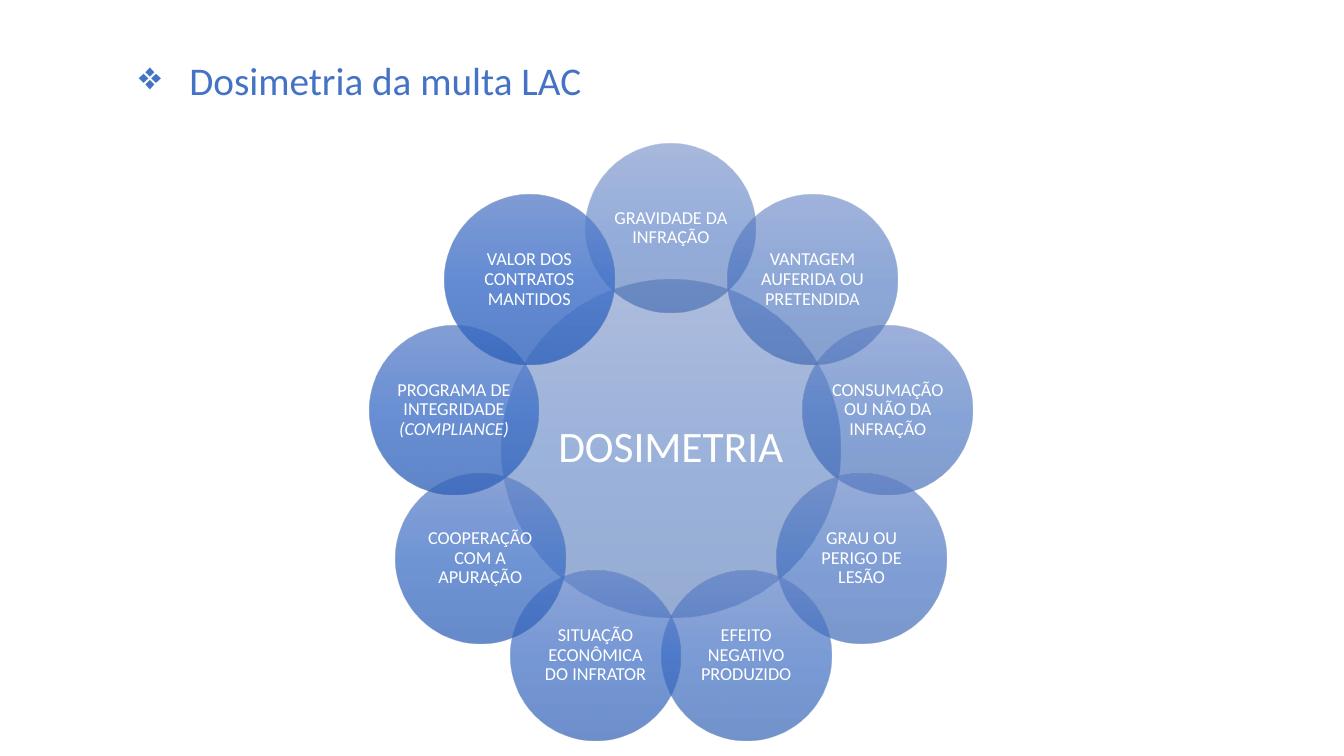
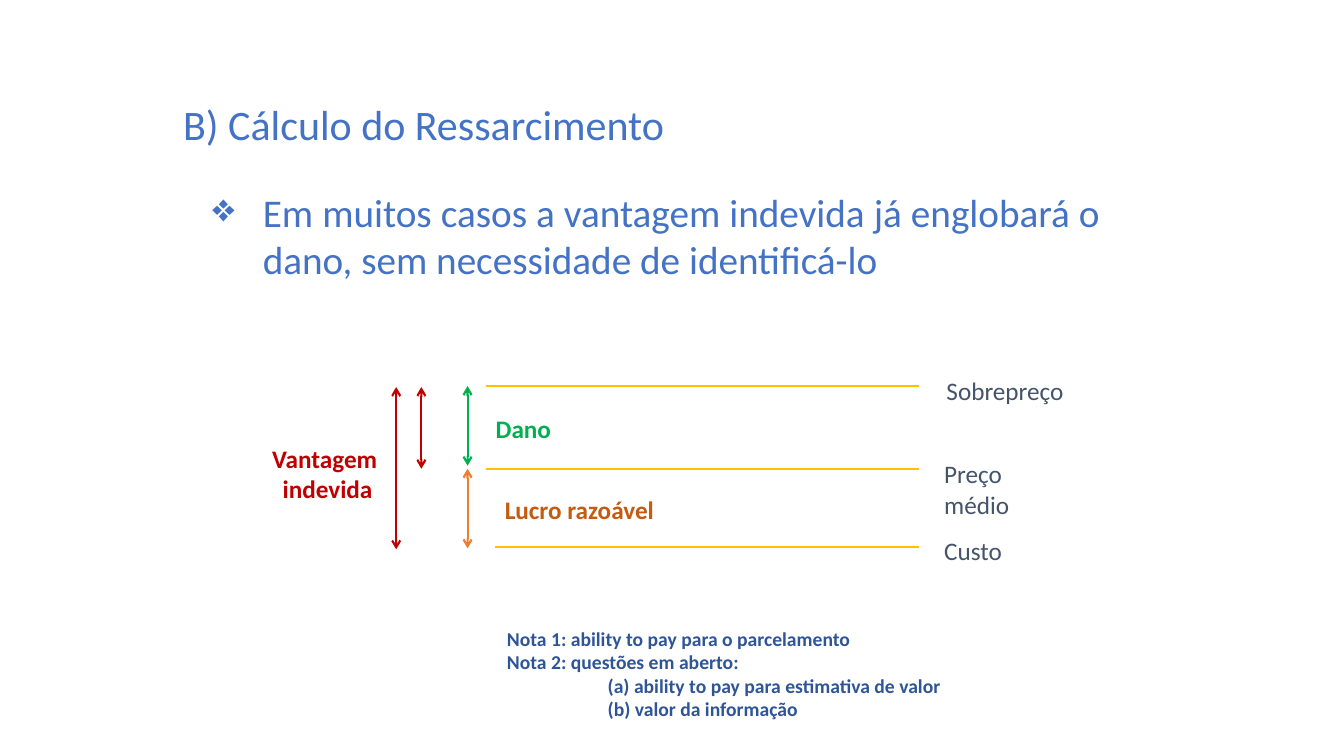
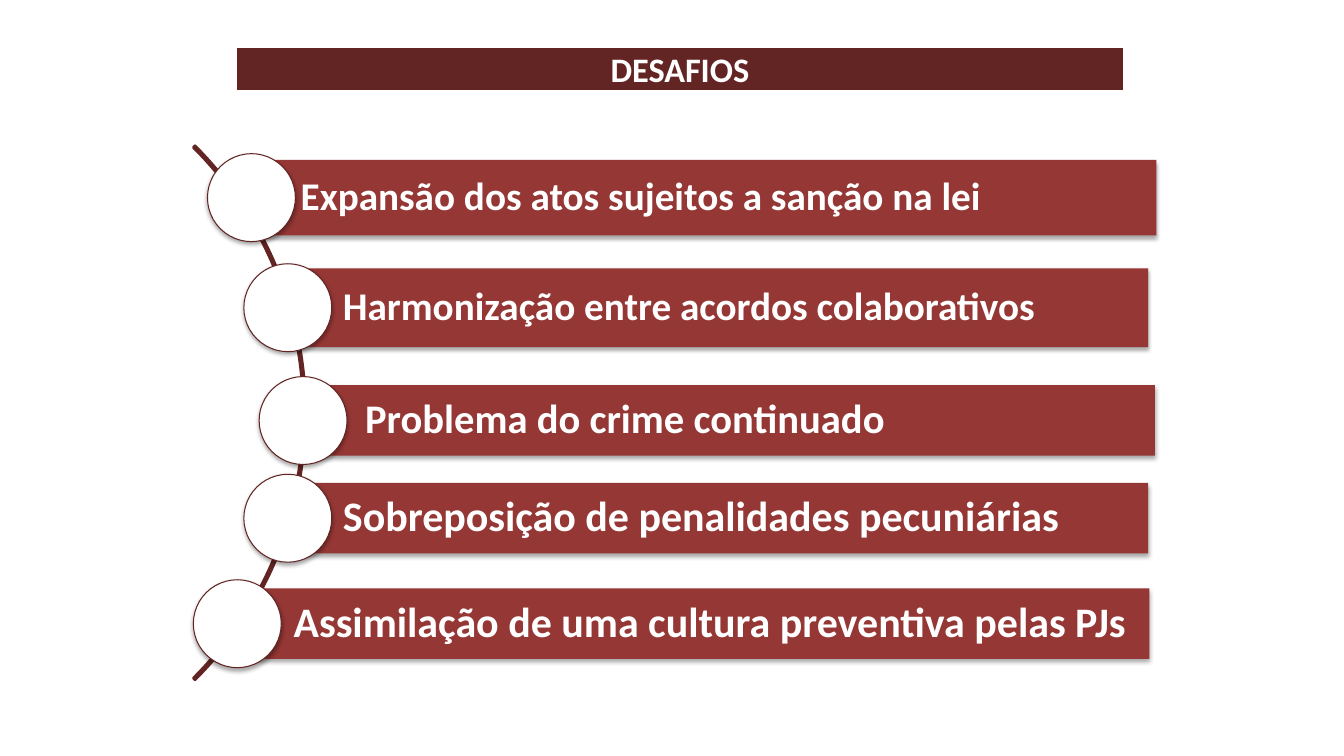
from math import cos, radians, sin

from lxml.etree import SubElement as Sub
from pptx import Presentation
from pptx.dml.color import RGBColor
from pptx.enum.shapes import MSO_CONNECTOR as Link, MSO_SHAPE as Form
from pptx.enum.text import MSO_ANCHOR as Anchor, PP_ALIGN as Align
from pptx.oxml.ns import qn
from pptx.util import Pt

FONT = "Calibri"
BLUE, NAVY, SLATE = "4472C4", "2F5597", "44546A"
RED, GREEN, GOLD = "C00000", "00B050", "FFC000"
ORANGE, RUST = "ED7D31", "C55A11"
WINE, BRICK, WHITE = "632523", "953735", "FFFFFF"


def tint(code):
    return RGBColor.from_string(code)


def blend(start, end, part):
    pairs = [(int(start[k:k + 2], 16), int(end[k:k + 2], 16)) for k in (0, 2, 4)]
    return "".join(f"{round(a + (b - a) * part):02X}" for a, b in pairs)


def write(frame, text, size=18, color=WHITE, bold=False, align=Align.LEFT,
          pad=(7.2, 3.6, 7.2, 3.6), mid=False, space=1, bullet=None, slant="",
          steps=()):
    frame.word_wrap = True
    frame.vertical_anchor = Anchor.MIDDLE if mid else Anchor.TOP
    (frame.margin_left, frame.margin_top,
     frame.margin_right, frame.margin_bottom) = map(Pt, pad)
    for row, line in enumerate(text.split("\n")):
        para = frame.add_paragraph() if row else frame.paragraphs[0]
        para.alignment, para.line_spacing = align, space
        props = para._p.get_or_add_pPr()
        if row in steps:
            props.set("marL", str(Pt(72)))
        if bullet:
            props.set("marL", str(Pt(36)))
            props.set("indent", str(-Pt(36)))
            Sub(props, qn("a:buChar"), char=bullet)
        for part, lean in ((line, False), (slant, True)):
            if part:
                run = para.add_run()
                run.text = part
                font = run.font
                font.name, font.size = FONT, Pt(size)
                font.bold, font.italic = bold, lean
                font.color.rgb = tint(color)


class Deck:
    """Holds the style and the current slide, and draws each kind of element."""

    def __init__(self):
        self.show = Presentation()
        self.show.slide_width, self.show.slide_height = Pt(960), Pt(540)
        self.slide = None

    def page(self):
        self.slide = self.show.slides.add_slide(self.show.slide_layouts[6])

    def text(self, box, words, **style):
        label = self.slide.shapes.add_textbox(*map(Pt, box))
        write(label.text_frame, words, **style)

    def point(self, box, words):
        self.text(box, words, size=28, color=BLUE, align=Align.JUSTIFY, bullet="❖")

    def shape(self, form, box, fill=WHITE, edge=None, width=0.75, shade=False):
        item = self.slide.shapes.add_shape(form, *map(Pt, box))
        item.shadow.inherit = False
        item.fill.solid()
        item.fill.fore_color.rgb = tint(fill)
        if edge:
            item.line.color.rgb = tint(edge)
            item.line.width = Pt(width)
        else:
            item.line.fill.background()
        if shade:
            effects = item._element.spPr.find(qn("a:effectLst"))
            cast = Sub(effects, qn("a:outerShdw"), blurRad=str(Pt(3.1)),
                       dist=str(Pt(1.8)), dir="5400000", rotWithShape="0")
            black = Sub(cast, qn("a:srgbClr"), val="000000")
            Sub(black, qn("a:alpha"), val="35000")
        return item

    def disc(self, x, y, span, stops, alpha, words, **style):
        item = self.shape(Form.OVAL, (x - span / 2, y - span / 2, span, span))
        item.fill.gradient()
        item.fill.gradient_angle = 270
        ramp = item._element.spPr.find(qn("a:gradFill")).find(qn("a:gsLst"))
        for old in list(ramp):
            ramp.remove(old)
        for place, code in zip((0, 50000, 100000), stops):
            stop = Sub(ramp, qn("a:gs"), pos=str(place))
            color = Sub(stop, qn("a:srgbClr"), val=code)
            Sub(color, qn("a:alpha"), val=str(alpha * 1000))
        write(item.text_frame, words, align=Align.CENTER, mid=True, space=0.9, **style)

    def line(self, x1, y1, x2, y2, color, arrow=False):
        item = self.slide.shapes.add_connector(
            Link.STRAIGHT, *map(Pt, (x1, y1, x2, y2)))
        item.line.color.rgb = tint(color)
        item.line.width = Pt(1.5)
        if arrow:
            stroke = item._element.spPr.find(qn("a:ln"))
            for end in ("a:headEnd", "a:tailEnd"):
                Sub(stroke, qn(end), type="arrow")
        Sub(item._element.spPr, qn("a:effectLst"))


def draw_wheel(deck):
    deck.page()
    x, y, reach = 479.2, 320.2, 157.3
    first = ("5C7ABD", "3866B8", "2D59A8")
    last = ("6284CB", "3F71CA", "3163BB")
    factors = [
        ("GRAVIDADE DA INFRAÇÃO", ""),
        ("VANTAGEM AUFERIDA OU PRETENDIDA", ""),
        ("CONSUMAÇÃO OU NÃO DA INFRAÇÃO", ""),
        ("GRAU OU PERIGO DE LESÃO", ""),
        ("EFEITO NEGATIVO PRODUZIDO", ""),
        ("SITUAÇÃO ECONÔMICA DO INFRATOR", ""),
        ("COOPERAÇÃO COM A APURAÇÃO", ""),
        ("PROGRAMA DE INTEGRIDADE ", "(COMPLIANCE)"),
        ("VALOR DOS CONTRATOS MANTIDOS", ""),
    ]
    count = len(factors)
    deck.disc(x, y, 241.5, first, 50, "DOSIMETRIA", size=31, pad=(2.9,) * 4)
    for k, (words, slant) in enumerate(factors):
        turn = radians(360 * k / count)
        part = (k + 1) / count
        stops = [blend(a, b, part) for a, b in zip(first, last)]
        deck.disc(x + reach * sin(turn), y - reach * cos(turn), 121.2, stops,
                  round(50 + 30 * part), words, slant=slant, size=13, pad=(1.4,) * 4)
    deck.point((92.2, 36.7, 648, 45.4), "Dosimetria da multa LAC")


def draw_prices(deck):
    deck.page()
    deck.text((123.8, 67, 453.6, 44), "B) Cálculo do Ressarcimento", size=30, color=BLUE)
    deck.point((144.7, 131, 648, 85),
               "Em muitos casos a vantagem indevida já englobará o dano, "
               "sem necessidade de identificá-lo")
    top, mean, cost = 275.8, 334.8, 391
    for left, y in ((347, top), (347, mean), (353.5, cost)):
        deck.line(left, y, 656.6, y, GOLD)
    for x, start, end, color in (
            (283, top + 0.7, cost + 1.4, RED), (301, top + 0.7, mean, RED),
            (334, top, mean - 2.2, GREEN), (334, mean, cost + 0.7, ORANGE)):
        deck.line(x, start, x, end, color, arrow=True)
    for box, words in (((669, 264.2, 100, 29), "Sobrepreço"),
                       ((667.4, 324, 100, 51), "Preço médio"),
                       ((667.4, 378.7, 94, 29), "Custo")):
        deck.text(box, words, color=SLATE)
    for box, words, color, align in (
            ((347, 291.6, 150, 29), "Dano", GREEN, Align.LEFT),
            ((353.5, 349.2, 150, 29), "Lucro razoável", RUST, Align.LEFT),
            ((186.5, 313.2, 95, 51), "Vantagem \nindevida", RED, Align.CENTER)):
        deck.text(box, words, color=color, align=align, bold=True)
    deck.text((355, 444.2, 345.6, 75),
              "Nota 1: ability to pay para o parcelamento\n"
              "Nota 2: questões em aberto:\n"
              "(a) ability to pay para estimativa de valor\n"
              "(b) valor da informação",
              size=14, color=NAVY, bold=True, steps=(2, 3))


def draw_goals(deck):
    deck.page()
    head = deck.shape(Form.RECTANGLE, (169.2, 33.8, 633, 31), WINE, WHITE)
    write(head.text_frame, "DESAFIOS", size=24.5, bold=True, align=Align.CENTER, mid=True)
    arc = deck.shape(Form.BLOCK_ARC, (-321, 25.2, 539.3, 539.3), "3BA0BB", WINE, 2)
    for k, value in enumerate((189, 27, 0.003)):
        arc.adjustments[k] = value
    dot = 62.8
    for left, y, width, high, x, size, words in (
            (175, 141.2, 651, 54, 179.6, 28, "Expansão dos atos sujeitos a sanção na lei"),
            (205.2, 219.8, 615, 56.2, 205.6, 28, "Harmonização entre acordos colaborativos"),
            (221, 300.4, 604, 50.4, 216.5, 29, "Problema do crime continuado"),
            (205.2, 370.2, 615, 50.4, 205.6, 30, "Sobreposição de penalidades pecuniárias"),
            (170, 445.5, 651, 50.4, 169.5, 30,
             "Assimilação de uma cultura preventiva pelas PJs")):
        bar = deck.shape(Form.RECTANGLE, (left, y - high / 2, width, high), BRICK, shade=True)
        write(bar.text_frame, words, size=size, bold=True, mid=True, space=0.9,
              pad=(39.8, 5.8, 5.8, 5.8))
        deck.shape(Form.OVAL, (x - dot / 2, y - dot / 2, dot, dot), WHITE, WINE, shade=True)


def main():
    deck = Deck()
    for draw in (draw_wheel, draw_prices, draw_goals):
        draw(deck)
    deck.show.save("out.pptx")


if __name__ == "__main__":
    main()
